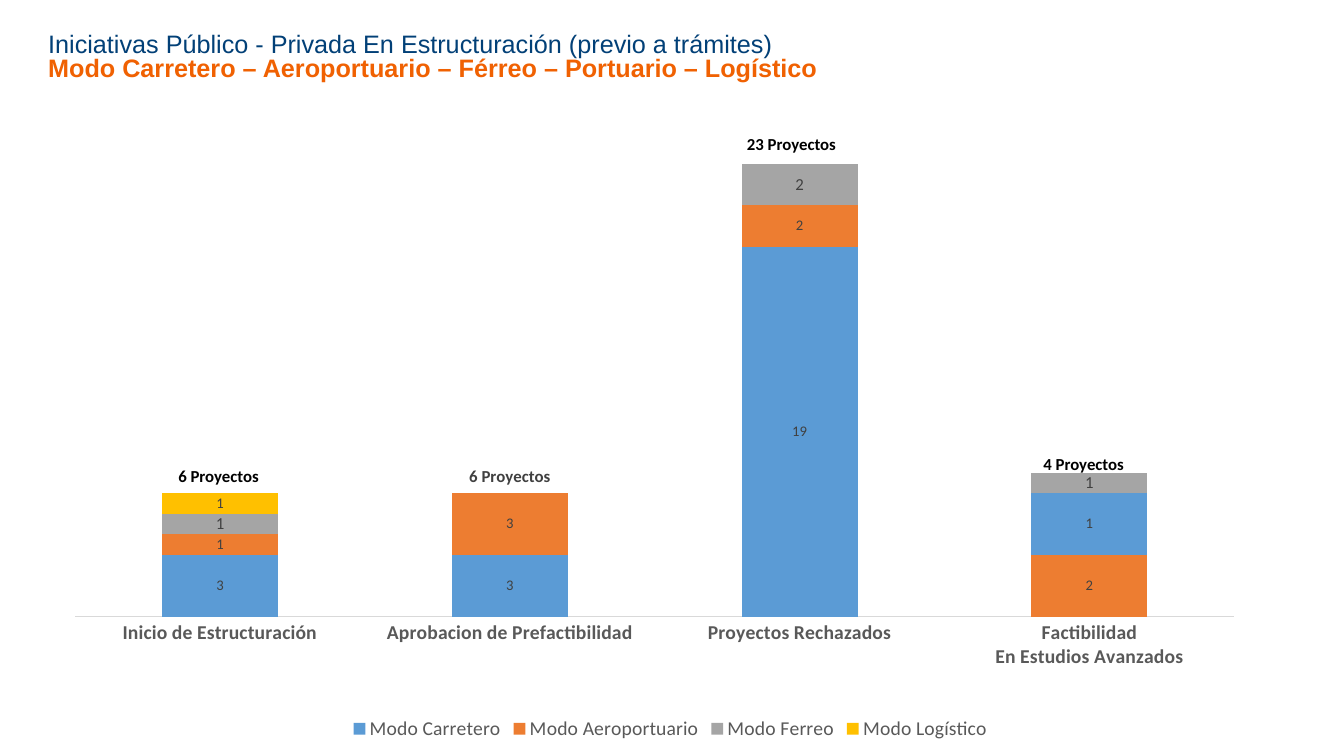
"""Build a slide with a stacked column chart of projects in structuring."""
from dataclasses import dataclass, field
from typing import Any

from pptx import Presentation
from pptx import util as u
from pptx.chart.data import CategoryChartData
from pptx.dml.color import RGBColor
from pptx.enum import chart as ch
from pptx.oxml import parse_xml
from pptx.oxml.ns import nsdecls

COLORS = {
    "blue": "5B9BD5", "orange": "ED7D31", "gray": "A5A5A5", "yellow": "FFC000",
    "white": "FFFFFF", "black": "000000", "label": "404040", "axis": "595959",
    "line": "D9D9D9", "navy": "024077", "title": "F06102",
}
CATEGORIES = ["Inicio de Estructuración", "Aprobacion de Prefactibilidad",
              "Proyectos Rechazados", "Factibilidad\nEn Estudios Avanzados"]


@dataclass
class Mode:
    name: str
    values: tuple[int, ...]
    color: str
    size: float = 10.5
    points: dict[int, str] = field(default_factory=dict)
    labels: dict[int, str] = field(default_factory=dict)


@dataclass
class Total:
    text: str
    left: float
    top: float


MODES = [
    Mode("Modo Carretero", (3, 3, 18, 3), "blue", points={3: "orange"},
         labels={2: "19", 3: "2"}),
    Mode("Modo Aeroportuario", (1, 3, 2, 3), "orange", points={3: "blue"},
         labels={3: "1"}),
    Mode("Modo Ferreo", (1, 1, 2, 1), "gray", 12, points={1: "white"},
         labels={1: "6 Proyectos"}),
    Mode("Modo Logístico", (1, 0, 0, 0), "yellow"),
]
TOTALS = [Total("6 Proyectos", 1.67, 4.57), Total("23 Proyectos", 7.31, 1.28),
          Total("4 Proyectos", 10.25, 4.45)]


def rgb(name: str) -> RGBColor:
    return RGBColor.from_string(COLORS[name])


def apply(obj: Any, formats: dict[str, Any]) -> None:
    for key, value in formats.items():
        setattr(obj, key, value)


def style(font: Any, size: float, color: str, bold: bool = False,
          name: str = "Calibri") -> None:
    apply(font, {"size": u.Pt(size), "bold": bold, "name": name})
    font.color.rgb = rgb(color)


def fill(fmt: Any, color: str) -> None:
    fmt.fill.solid()
    fmt.fill.fore_color.rgb = rgb(color)


def place(parent: Any, index: int, **values: Any) -> None:
    for old in parent.xpath("c:layout"):
        parent.remove(old)
    items = "".join(f'<c:{k} val="{v}"/>' for k, v in values.items())
    parent.insert(index, parse_xml(
        f'<c:layout {nsdecls("c")}><c:manualLayout>{items}</c:manualLayout></c:layout>'))


def text_box(s: Any, left: float, top: float, width: float, height: float) -> Any:
    sp = s.shapes.add_textbox(*map(u.Inches, (left, top, width, height)))
    sp.text_frame.word_wrap = True
    return sp.text_frame.paragraphs[0]


def add_run(p: Any, words: str, size: float, color: str, bold: bool,
            name: str = "Calibri") -> None:
    r = p.add_run()
    r.text = words
    style(r.font, size, color, bold, name)


def format_mode(series: Any, mode: Mode) -> None:
    fill(series.format, mode.color)
    dl = series.data_labels
    apply(dl, {"show_value": True, "number_format": "0;;",
               "number_format_is_linked": False})
    style(dl.font, mode.size, "label")
    for i, color in mode.points.items():
        fill(series.points[i].format, color)
    for i, words in mode.labels.items():
        p = series.points[i].data_label.text_frame.paragraphs[0]
        add_run(p, words, mode.size, "label", not words.isdigit())


def add_projects_chart(s: Any) -> None:
    data = CategoryChartData(number_format="0")
    data.categories = CATEGORIES
    for mode in MODES:
        data.add_series(mode.name, mode.values)
    chart = s.shapes.add_chart(
        ch.XL_CHART_TYPE.COLUMN_STACKED,
        *map(u.Inches, (0.74, 0.94, 11.81, 6.45)), data).chart
    apply(chart, {"has_title": False, "has_legend": True})
    style(chart.font, 10, "black")
    apply(chart.legend, {"position": ch.XL_LEGEND_POSITION.BOTTOM,
                         "include_in_layout": False})
    style(chart.legend.font, 14, "axis")
    apply(chart.value_axis, {"minimum_scale": 0, "maximum_scale": 25,
                             "has_major_gridlines": False, "visible": False})
    axis = chart.category_axis
    apply(axis, {"major_tick_mark": ch.XL_TICK_MARK.NONE,
                 "minor_tick_mark": ch.XL_TICK_MARK.NONE})
    style(axis.tick_labels.font, 14, "axis", True)
    axis.format.line.color.rgb = rgb("line")
    axis.format.line.width = u.Pt(0.75)
    plot = chart.plots[0]
    apply(plot, {"gap_width": 150, "overlap": 100, "vary_by_categories": False})
    for series, mode in zip(plot.series, MODES):
        format_mode(series, mode)
    place(chart.element.xpath("//c:plotArea")[0], 0, layoutTarget="inner",
          xMode="edge", yMode="edge", x=0, y=0.012, w=0.974, h=0.791)
    place(chart.element.xpath("//c:ser[3]//c:dLbl")[0], 1, x=0, y=-0.01)


def main() -> None:
    prs = Presentation()
    apply(prs, {"slide_width": u.Inches(13.33), "slide_height": u.Inches(7.5)})
    s = prs.slides.add_slide(prs.slide_layouts[6])
    add_projects_chart(s)
    p = text_box(s, 0.38, 0.29, 8.26, 0.65)
    p.line_spacing = 0.8
    add_run(p, "Iniciativas Público - Privada En Estructuración (previo a trámites)",
            18, "navy", False, "Arial")
    p.add_line_break()
    add_run(p, "Modo Carretero – Aeroportuario – Férreo – Portuario – Logístico",
            18, "title", True, "Arial")
    for total in TOTALS:
        p = text_box(s, total.left, total.top, 1.13, 0.3)
        add_run(p, total.text, 12, "black", True)
    prs.save("out.pptx")


if __name__ == "__main__":
    main()
